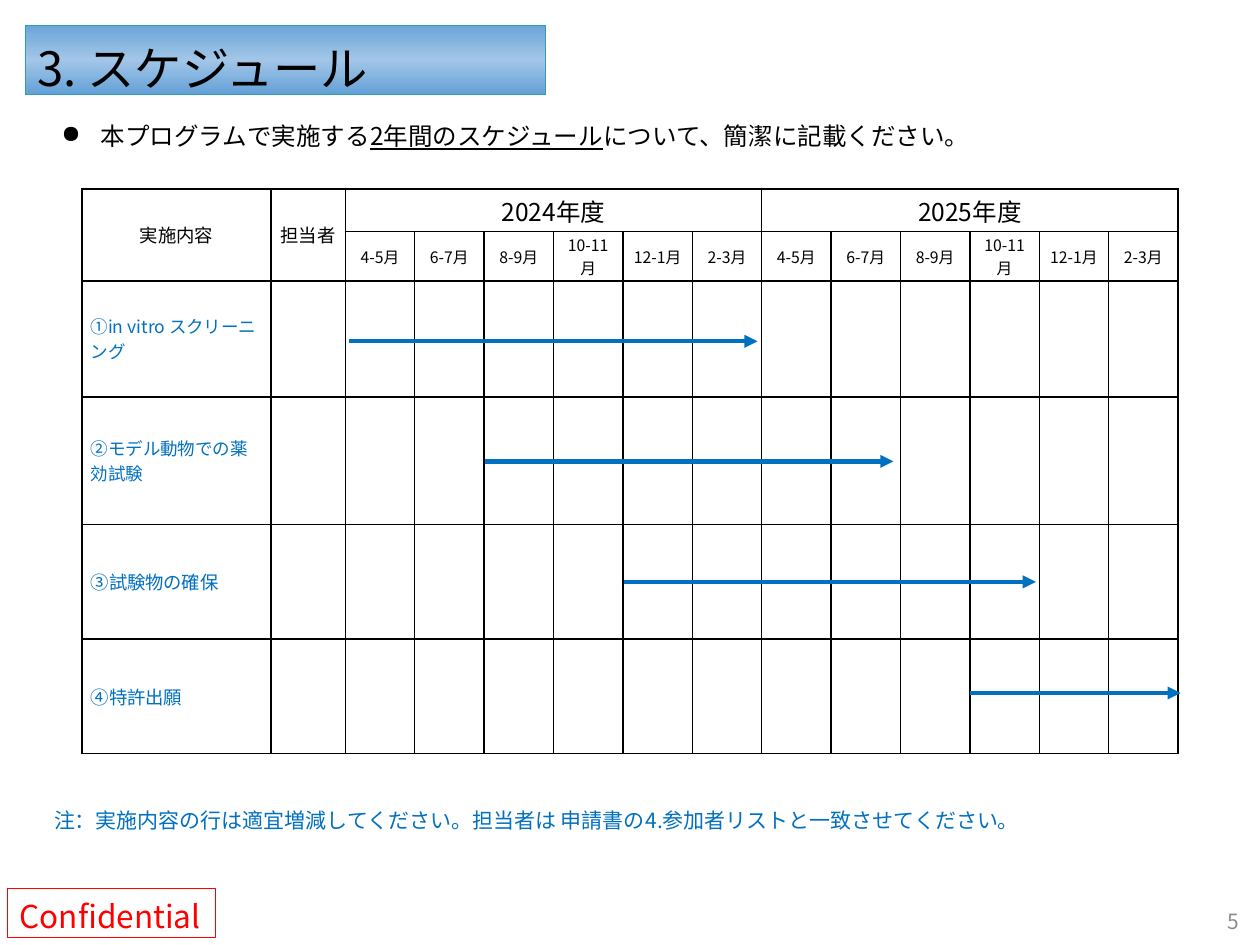
"""Build a two-year schedule slide with a task table and timeline arrows."""
from copy import deepcopy
from dataclasses import dataclass

from lxml import etree
from pptx import Presentation
from pptx.dml.color import RGBColor
from pptx.enum.shapes import MSO_CONNECTOR, MSO_SHAPE
from pptx.enum.text import MSO_ANCHOR, MSO_AUTO_SIZE, PP_ALIGN
from pptx.oxml.ns import qn
from pptx.util import Cm, Pt

RECTANGLE = MSO_SHAPE.RECTANGLE
STRAIGHT = MSO_CONNECTOR.STRAIGHT
MIDDLE, TOP = MSO_ANCHOR.MIDDLE, MSO_ANCHOR.TOP
GROW, FIXED = MSO_AUTO_SIZE.SHAPE_TO_FIT_TEXT, MSO_AUTO_SIZE.NONE
LEFT, CENTER, RIGHT, JUSTIFY = PP_ALIGN.LEFT, PP_ALIGN.CENTER, PP_ALIGN.RIGHT, PP_ALIGN.JUSTIFY

FONT = "Noto Sans CJK JP"
BLACK, BLUE, RED, GRAY = "000000", "0070C0", "FF0000", "8C8C8C"
TITLE_STOPS = ((0, "6BA5D9"), (0.5, "A2C6E7"), (1, "63A0D7"))

YEARS = ("2024年度", "2025年度")
MONTHS = ("4-5月", "6-7月", "8-9月", "10-11月", "12-1月", "2-3月")
COLUMN_WIDTHS = [3.81, 1.5] + [1.4] * len(MONTHS) * len(YEARS)
ROW_HEIGHTS = (0.86, 0.99, 2.34, 2.57, 2.31, 2.31)
FIRST_MONTH, FIRST_TASK = 2, 2


@dataclass
class Area:
    """Position and size in centimetres."""
    left: float
    top: float
    width: float
    height: float

    def lengths(self) -> tuple:
        """Return the four values as lengths."""
        return Cm(self.left), Cm(self.top), Cm(self.width), Cm(self.height)


@dataclass
class Style:
    """Size, colour and alignment of a paragraph."""
    size: float
    color: str = BLACK
    align: PP_ALIGN = LEFT


@dataclass
class Task:
    """A table row with the arrow that shows its period, in centimetres."""
    name: str
    style: Style
    start: float
    end: float
    height: float


TASKS = (
    Task("①in vitro スクリーニング", Style(10, BLUE), 7.04, 15.27, 6.88),
    Task("②モデル動物での薬効試験", Style(10, BLUE), 9.78, 18.01, 9.3),
    Task("③試験物の確保", Style(10.5, BLUE, JUSTIFY), 12.57, 20.88, 11.73),
    Task("④特許出願", Style(10.5, BLUE), 19.56, 23.8, 13.97),
)


def rgb(color: str) -> RGBColor:
    """Turn a hex string into a colour."""
    return RGBColor.from_string(color)


def write(paragraph, style: Style, *texts: str) -> None:
    """Add the texts as runs and set the font of the paragraph."""
    for text in texts:
        paragraph.add_run().text = text
    paragraph.alignment = style.align
    font = paragraph.font
    font.size, font.name = Pt(style.size), FONT
    font.color.rgb = rgb(style.color)
    properties = paragraph._p.pPr.find(qn("a:defRPr"))
    etree.SubElement(properties, qn("a:ea"), typeface=FONT)


def add_text(page, area: Area, style: Style, *texts: str, anchor=TOP, size_rule=GROW):
    """Add a wrapping text box and return its paragraph."""
    frame = page.shapes.add_textbox(*area.lengths()).text_frame
    frame.word_wrap, frame.auto_size = True, size_rule
    frame.vertical_anchor = anchor
    write(frame.paragraphs[0], style, *texts)
    return frame.paragraphs[0]


def add_bullet(paragraph, sign: str, indent: float) -> None:
    """Give a paragraph a bullet with a hanging indent."""
    properties = paragraph._p.pPr
    properties.set("marL", str(Cm(indent)))
    properties.set("indent", str(-Cm(indent)))
    bullet = etree.Element(qn("a:buChar"), char=sign)
    properties.insert(0, bullet)


def add_label(page, area: Area, style: Style, text: str, line: str, width: float,
              top: float, bottom: float):
    """Add an outlined rectangle with one line of text."""
    box = page.shapes.add_shape(RECTANGLE, *area.lengths())
    box.shadow.inherit = False
    box.fill.background()
    box.line.color.rgb, box.line.width = rgb(line), Pt(width)
    frame = box.text_frame
    frame.word_wrap, frame.vertical_anchor = False, MIDDLE
    frame.margin_top, frame.margin_bottom = Cm(top), Cm(bottom)
    write(frame.paragraphs[0], style, text)
    return box


def fill_gradient(box, stops: tuple) -> None:
    """Fill a shape with a vertical gradient."""
    box.fill.gradient()
    box.fill.gradient_angle = 270
    stop_list = box._element.spPr.find(".//" + qn("a:gsLst"))
    while len(stop_list) < len(stops):
        stop_list.append(deepcopy(stop_list[-1]))
    for stop, (position, color) in zip(box.fill.gradient_stops, stops):
        stop.position, stop.color.rgb = position, rgb(color)


def format_cell(cell) -> None:
    """Clear the fill of a cell, set its margins and draw its borders."""
    cell.margin_left = cell.margin_right = Cm(0.18)
    cell.margin_top = cell.margin_bottom = 0
    cell.vertical_anchor = MIDDLE
    properties = cell._tc.get_or_add_tcPr()
    for side in ("lnL", "lnR", "lnT", "lnB"):
        border = etree.SubElement(properties, qn(f"a:{side}"), w=str(Pt(1)))
        fill = etree.SubElement(border, qn("a:solidFill"))
        etree.SubElement(fill, qn("a:srgbClr"), val=BLACK)
    cell.fill.background()


def add_schedule(page) -> None:
    """Add the table of tasks against months."""
    area = Area(1.65, 3.81, sum(COLUMN_WIDTHS), sum(ROW_HEIGHTS))
    table = page.shapes.add_table(len(ROW_HEIGHTS), len(COLUMN_WIDTHS), *area.lengths()).table
    table.first_row = table.horz_banding = False
    for column, width in zip(table.columns, COLUMN_WIDTHS):
        column.width = Cm(width)
    for row, height in zip(table.rows, ROW_HEIGHTS):
        row.height = Cm(height)
    for cell in table.iter_cells():
        format_cell(cell)

    def put(row: int, column: int, text: str, style: Style) -> None:
        """Write one cell."""
        write(table.cell(row, column).text_frame.paragraphs[0], style, text)

    for column, heading in enumerate(("実施内容", "担当者")):
        table.cell(0, column).merge(table.cell(1, column))
        put(0, column, heading, Style(10.5, align=CENTER))
    for index, year in enumerate(YEARS):
        first = FIRST_MONTH + index * len(MONTHS)
        table.cell(0, first).merge(table.cell(0, first + len(MONTHS) - 1))
        put(0, first, year, Style(14, align=CENTER))
        for column, month in enumerate(MONTHS, first):
            put(1, column, month, Style(9, align=CENTER))
    for row, task in enumerate(TASKS, FIRST_TASK):
        put(row, 0, task.name, task.style)


def add_arrow(page, task: Task) -> None:
    """Draw the period of a task."""
    height = Cm(task.height)
    arrow = page.shapes.add_connector(STRAIGHT, Cm(task.start), height, Cm(task.end), height)
    arrow.line.color.rgb, arrow.line.width = rgb(BLUE), Pt(2.5)
    etree.SubElement(arrow.line._get_or_add_ln(), qn("a:tailEnd"), type="triangle")
    etree.SubElement(arrow._element.spPr, qn("a:effectLst"))


def main() -> None:
    """Build and save the slide."""
    deck = Presentation()
    deck.slide_width, deck.slide_height = Cm(25.4), Cm(19.05)
    page = deck.slides.add_slide(deck.slide_layouts[6])
    add_label(page, Area(0.15, 17.91, 4.19, 0.99), Style(18, RED), "Confidential", RED, 0.75, 0.2, 0.1)
    lead = add_text(page, Area(0.99, 2.31, 23.95, 0.86), Style(14), "本プログラムで実施する",
                    "2年間のスケジュール", "について、簡潔に記載ください。")
    lead.runs[1].font.underline = True
    add_bullet(lead, "●", 0.79)
    add_schedule(page)
    for task in TASKS:
        add_arrow(page, task)
    add_text(page, Area(0.84, 16.15, 23.72, 0.76), Style(12, BLUE),
             "注：実施内容の行は適宜増減してください。担当者は 申請書の4.参加者リストと一致させてください。")
    add_text(page, Area(24.05, 18.21, 1.19, 0.71), Style(12, GRAY, RIGHT), "5",
             anchor=MIDDLE, size_rule=FIXED)
    title = add_label(page, Area(0.51, 0.51, 10.49, 1.4), Style(27), "3. スケジュール",
                      "2F9CBA", 0.5, 0.3, 0)
    fill_gradient(title, TITLE_STOPS)
    deck.save("out.pptx")


if __name__ == "__main__":
    main()
